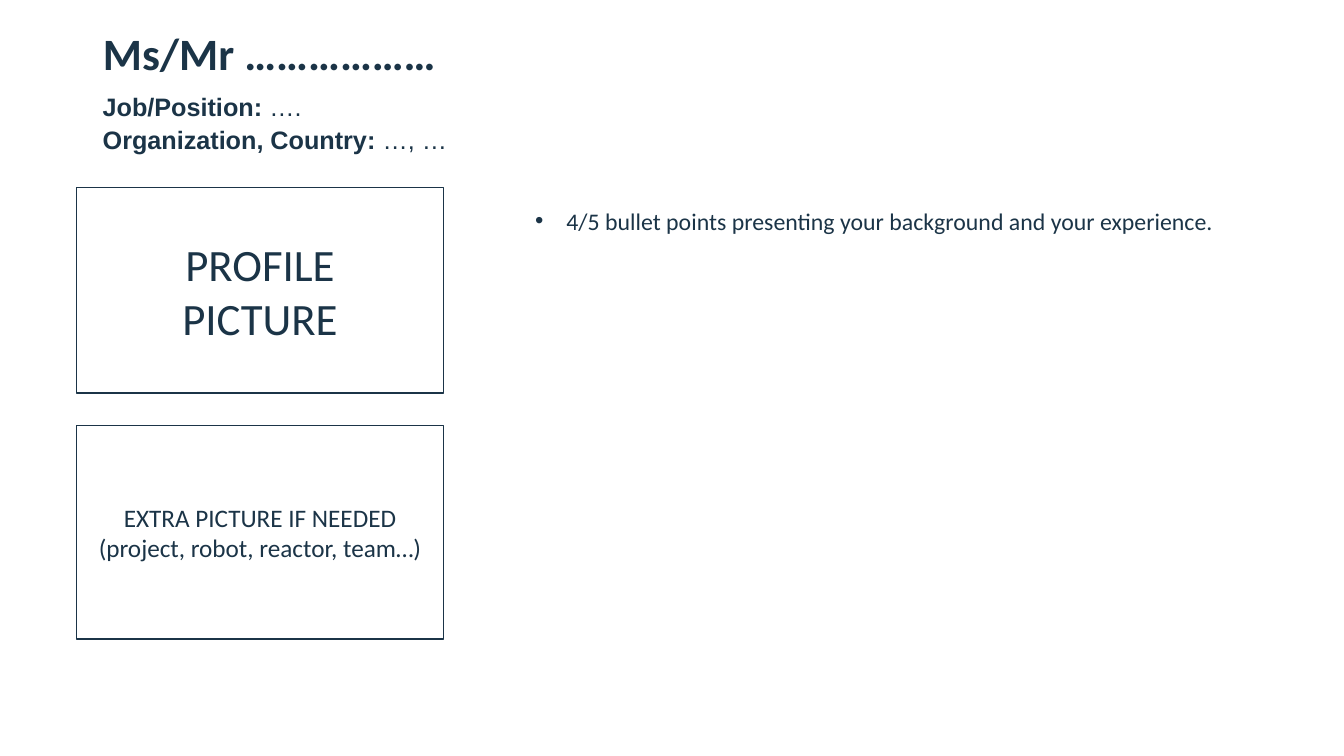
from lxml.etree import SubElement
from pptx import Presentation
from pptx.dml.color import RGBColor
from pptx.enum.shapes import MSO_SHAPE as Shape
from pptx.enum.text import MSO_ANCHOR as Anchor, PP_ALIGN as Align
from pptx.oxml.ns import qn
from pptx.util import Inches, Pt

NAVY = "1B3447"
WHITE = "FFFFFF"


def color(code):
    return RGBColor.from_string(code)


def add_run(para, text, size, font="Calibri", bold=False):
    run = para.add_run()
    run.text = text
    run.font.name = font
    run.font.size = Pt(size)
    run.font.bold = bold
    run.font.color.rgb = color(NAVY)


def add_box(slide, *rect):
    """Add a wrapping text box and return its first paragraph."""
    frame = slide.shapes.add_textbox(*map(Inches, rect)).text_frame
    frame.word_wrap = True
    return frame.paragraphs[0]


def add_title(slide, text):
    title = slide.shapes.title
    title.left, title.top = Inches(0.92), Inches(0.25)
    title.width, title.height = Inches(6.66), Inches(0.62)
    title.text_frame.vertical_anchor = Anchor.MIDDLE
    para = title.text_frame.paragraphs[0]
    para.alignment = Align.LEFT
    para.line_spacing = 0.9
    add_run(para, text, 32, bold=True)


def add_field(slide, top, label, value):
    para = add_box(slide, 0.92, top, 8.58, 0.37)
    add_run(para, label, 18, "Arial", True)
    add_run(para, value, 18, "Arial")


def add_bullet(slide, text):
    para = add_box(slide, 5.21, 1.94, 7.57, 4.08)
    props = para._p.get_or_add_pPr()
    props.set("marL", str(Inches(0.31)))
    props.set("indent", str(-Inches(0.31)))
    SubElement(props, qn("a:buFont"), typeface="Arial")
    SubElement(props, qn("a:buChar"), char="•")
    para.line_spacing = 1.2
    add_run(para, text, 17)


def add_frame(slide, top, height, lines, size):
    """Add an outlined box that holds the place of a photo."""
    rect = map(Inches, (0.76, top, 3.64, height))
    shape = slide.shapes.add_shape(Shape.ROUNDED_RECTANGLE, *rect)
    shape.adjustments[0] = 0
    shape.shadow.inherit = False
    shape.fill.solid()
    shape.fill.fore_color.rgb = color(WHITE)
    shape.line.color.rgb = color(NAVY)
    shape.line.width = Pt(1)
    frame = shape.text_frame
    frame.word_wrap = True
    frame.vertical_anchor = Anchor.MIDDLE
    para = frame.paragraphs[0]
    para.alignment = Align.CENTER
    for i, line in enumerate(lines):
        if i:
            para.add_line_break()
        add_run(para, line, size)


def main():
    deck = Presentation()
    deck.slide_width, deck.slide_height = Inches(13.33), Inches(7.5)
    slide = deck.slides.add_slide(deck.slide_layouts[5])
    add_title(slide, "Ms/Mr ………………")
    add_bullet(slide, "4/5 bullet points presenting your background "
                      "and your experience.")
    add_field(slide, 0.86, "Job/Position: ", "….")
    add_field(slide, 1.18, "Organization, Country: ", "…, …")
    add_frame(slide, 1.86, 2.04, ["PROFILE", "PICTURE"], 32)
    add_frame(slide, 4.22, 2.12, ["EXTRA PICTURE IF NEEDED "
                                  "(project, robot, reactor, team…)"], 18)
    deck.save("out.pptx")


if __name__ == "__main__":
    main()
